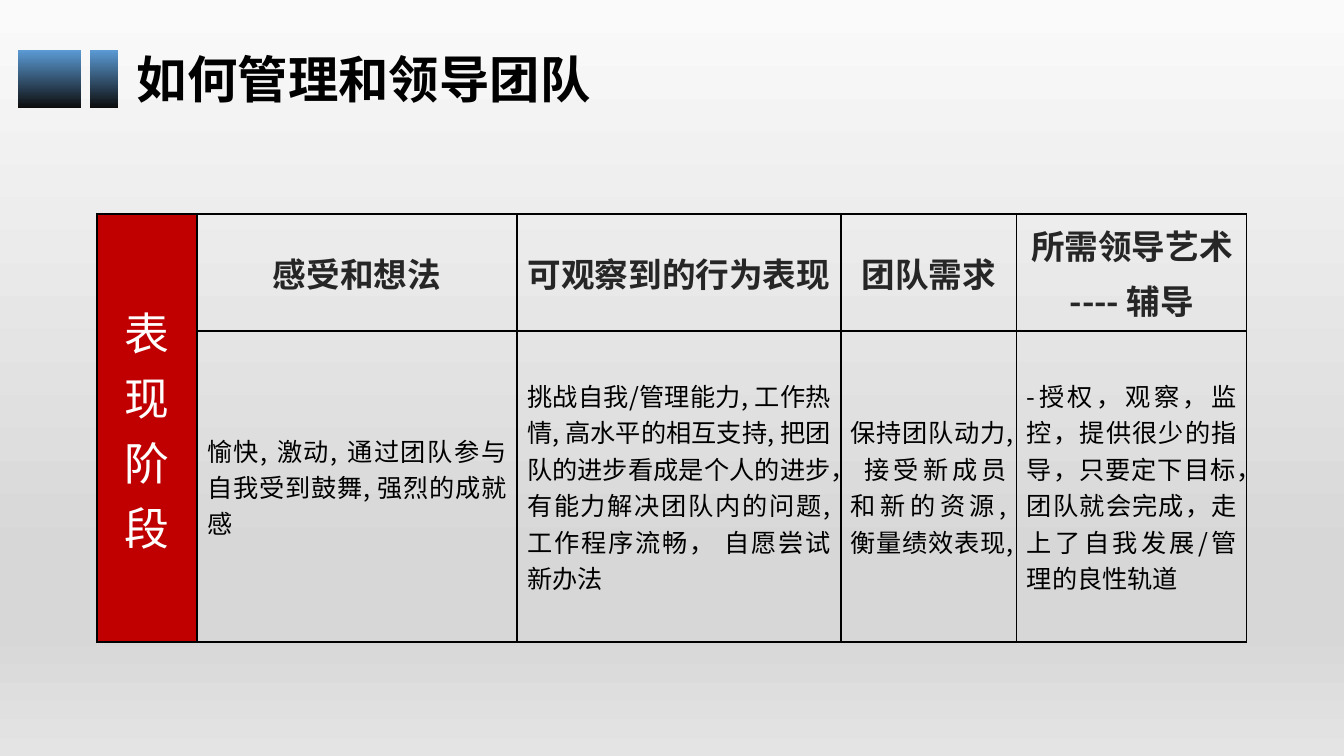
from lxml import etree
from pptx import Presentation
from pptx import util as u
from pptx.dml.color import RGBColor
from pptx.enum import shapes, text
from pptx.oxml import parse_xml
from pptx.oxml.ns import nsdecls, qn

PX = 12192000 / 1344
FONT = "Noto Sans CJK SC"


def paint_gradient(fill, element, stops):
    """Fill from top to bottom with (percent, colour) stops."""
    fill.gradient()
    fill.gradient_angle = 270
    stop_list = next(element.iter(qn("a:gsLst")))
    for old_stop in list(stop_list):
        stop_list.remove(old_stop)
    for percent, colour in stops:
        stop = etree.SubElement(stop_list, qn("a:gs"), pos=str(percent * 1000))
        etree.SubElement(stop, qn("a:srgbClr"), val=colour)


def add_run(paragraph, wording, size, colour, bold=False):
    run = paragraph.add_run()
    run.text = wording
    run.font.size = u.Pt(size)
    run.font.bold = bold
    run.font.color.rgb = RGBColor.from_string(colour)
    run.font.name = FONT
    etree.SubElement(run.font._element, qn("a:ea"), typeface=FONT)


presentation = Presentation()
presentation.slide_width = u.Emu(round(1344 * PX))
presentation.slide_height = u.Emu(round(756 * PX))
slide = presentation.slides.add_slide(presentation.slide_layouts[6])
paint_gradient(slide.background.fill, slide.element.cSld,
               [(0, "FAFAFA"), (74, "D7D7D7"), (83, "D7D7D7"), (100, "E4E4E4")])

# Title with its two blocks
for left, width in [(18, 63), (90, 28)]:
    box = [u.Emu(round(n * PX)) for n in (left, 50, width, 58)]
    block = slide.shapes.add_shape(shapes.MSO_SHAPE.RECTANGLE, *box)
    block.shadow.inherit = False
    block.line.fill.background()
    paint_gradient(block.fill, block.element, [(0, "5B9BD5"), (100, "0D0D0D")])

box = [u.Emu(round(n * PX)) for n in (127, 43, 795, 72)]
title = slide.shapes.add_textbox(*box).text_frame
title.word_wrap = True
add_run(title.paragraphs[0], "如何管理和领导团队", 36, "000000", True)

# Stage table
column_widths = [100, 320, 324, 176, 230]
row_heights = [117, 311]
headers = [["感受和想法"], ["可观察到的行为表现"], ["团队需求"],
           ["所需领导艺术", "---- 辅导"]]
details = [
    ["愉快, 激动, 通过团队参与自我受到鼓舞, 强烈的成就感"],
    ["挑战自我/管理能力, 工作热情, 高水平的相互支持, 把团队的进步看成是个人的进步，"
     "有能力解决团队内的问题, 工作程序流畅， 自愿尝试新办法"],
    ["保持团队动力, 接受新成员和新的资源, 衡量绩效表现,"],
    ["-授权，观察，监控，提供很少的指导，只要定下目标，团队就会完成，"
     "走上了自我发展/管理的良性轨道"],
]
box = [u.Emu(round(n * PX))
       for n in (97, 214, sum(column_widths), sum(row_heights))]
table = slide.shapes.add_table(2, 5, *box).table
table.first_row = False
table.horz_banding = False
for column, width in zip(table.columns, column_widths):
    column.width = u.Emu(round(width * PX))
for row, height in zip(table.rows, row_heights):
    row.height = u.Emu(round(height * PX))

for cell in table.iter_cells():
    cell.vertical_anchor = text.MSO_ANCHOR.MIDDLE
    cell.fill.background()
    properties = cell._tc.get_or_add_tcPr()
    for index, side in enumerate(["lnL", "lnR", "lnT", "lnB"]):
        properties.insert(index, parse_xml(
            f'<a:{side} {nsdecls("a")} w="12700"><a:solidFill>'
            f'<a:srgbClr val="000000"/></a:solidFill></a:{side}>'))

stage = table.cell(0, 0)
stage.merge(table.cell(1, 0))
stage.fill.solid()
stage.fill.fore_color.rgb = RGBColor.from_string("C00000")
stage._tc.get_or_add_tcPr().set("vert", "eaVert")
stage_paragraph = stage.text_frame.paragraphs[0]
stage_paragraph.alignment = text.PP_ALIGN.CENTER
add_run(stage_paragraph, "表现阶段", 32, "FFFFFF")

row_styles = [
    (headers, text.PP_ALIGN.CENTER, 24, "262626", True),
    (details, text.PP_ALIGN.JUSTIFY, 18, "000000", False),
]
for row_index, (entries, alignment, size, colour, bold) in enumerate(row_styles):
    for column_index, lines in enumerate(entries, start=1):
        frame = table.cell(row_index, column_index).text_frame
        for line_index, line in enumerate(lines):
            paragraph = frame.add_paragraph() if line_index else frame.paragraphs[0]
            paragraph.alignment = alignment
            if len(lines) > 1 or entries is details:
                paragraph.space_before = u.Pt(size * 0.2)
            add_run(paragraph, line, size, colour, bold)

presentation.save("out.pptx")
